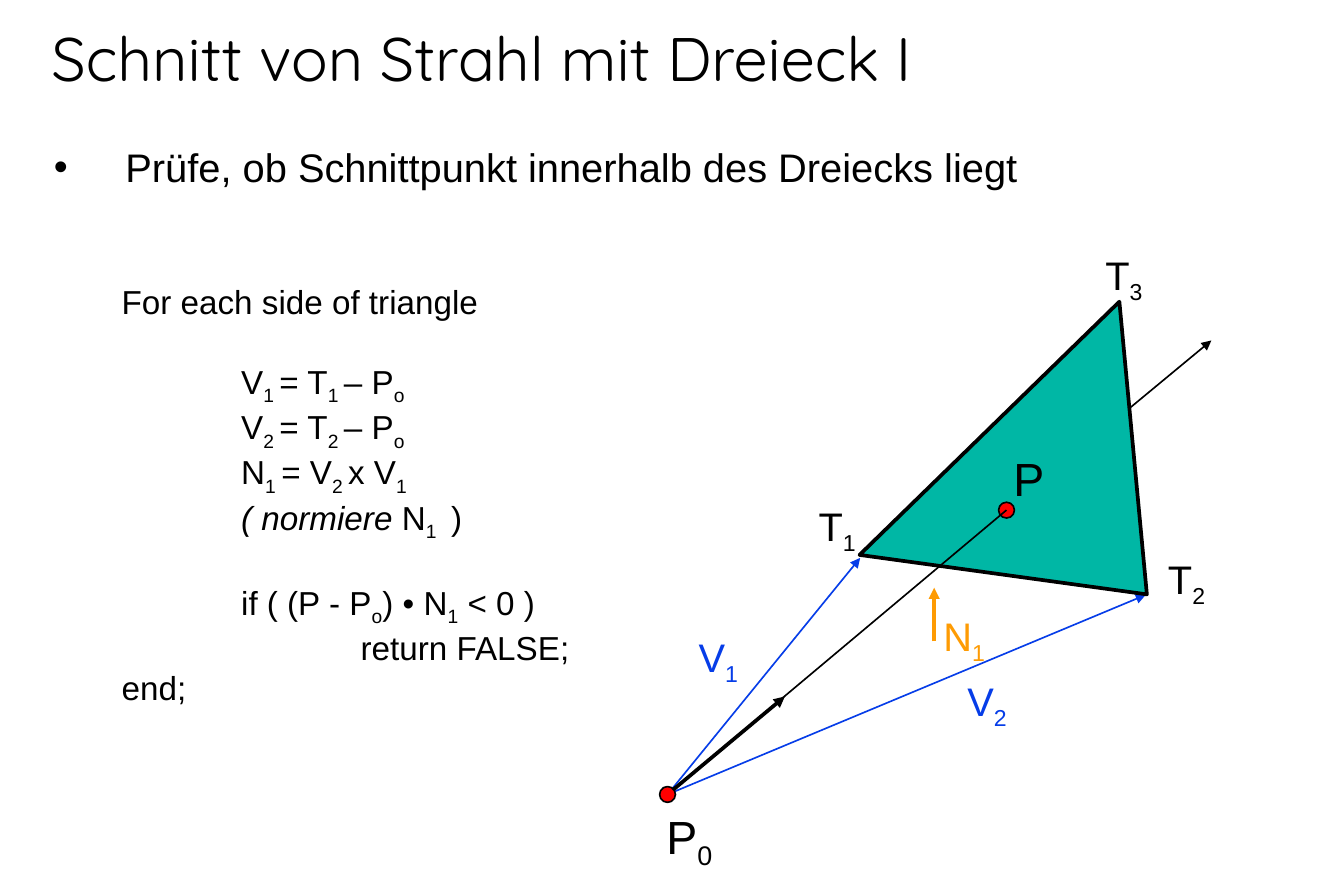
from lxml.etree import SubElement as Sub
from pptx import Presentation as Deck
from pptx.dml.color import RGBColor as RGB
from pptx.enum.shapes import MSO_CONNECTOR as Link, MSO_SHAPE as Form
from pptx.enum.text import MSO_ANCHOR as Anchor, MSO_AUTO_SIZE as Fit, PP_ALIGN as Align
from pptx.oxml.ns import qn
from pptx.util import Inches, Pt

BLACK = RGB(0, 0, 0)
BLUE = RGB(0x06, 0x3D, 0xE8)
TEAL = RGB(0x00, 0xB7, 0xA5)
RED = RGB(0xFF, 0, 0)
GOLD = RGB(0xFE, 0x9B, 0x03)
COLS, ROWS = 45, 30


def write(par, text, size=24, color=BLACK, font="Arial", lead="",
          align=Align.LEFT, indent=0, hang=0, before=0, space=1.0):
    par.alignment = align
    par.space_before = Pt(before)
    par.line_spacing = space
    props = par._p.get_or_add_pPr()
    props.set("marL", str(Inches(indent)))
    props.set("indent", str(-Inches(hang)))
    parts = [(lead, False, True)] if lead else []
    parts += [(bit, i % 2 == 1, False) for i, bit in enumerate(text.split("|"))]
    for bit, low, slant in parts:
        run = par.add_run()
        run.text = bit
        run.font.name = font
        run.font.size = Pt(size)
        run.font.color.rgb = color
        run.font.italic = slant
        if low:
            run._r.get_or_add_rPr().set("baseline", "-25000")


class Sketch:
    def __init__(self, deck):
        self.slide = deck.slides.add_slide(deck.slide_layouts[1])
        self.shapes = self.slide.shapes
        self.col = deck.slide_width / COLS
        self.row = deck.slide_height / ROWS

    def spot(self, x, y):
        return round(x * self.col), round(y * self.row)

    def box(self, x, y, wide, high):
        return *self.spot(x, y), *self.spot(wide, high)

    def hold(self, index, text, area, anchor, **style):
        shape = self.slide.placeholders[index]
        shape.left, shape.top, shape.width, shape.height = self.box(*area)
        frame = shape.text_frame
        frame.auto_size = Fit.NONE
        frame.vertical_anchor = anchor
        write(frame.paragraphs[0], text, **style)

    def block(self, area, lines):
        frame = self.shapes.add_textbox(*self.box(*area)).text_frame
        frame.word_wrap = True
        for i, (text, style) in enumerate(lines):
            par = frame.add_paragraph() if i else frame.paragraphs[0]
            write(par, text, **style)

    def label(self, text, x, y, size=24, color=BLACK):
        wide, high = 3.2, size / 12
        style = dict(size=size, color=color, align=Align.CENTER)
        self.block((x - wide / 2, y - high / 2, wide, high), [(text, style)])

    def ray(self, start, end, color=BLACK, width=1, head=True):
        line = self.shapes.add_connector(Link.STRAIGHT, *self.spot(*start), *self.spot(*end))
        line.line.color.rgb = color
        line.line.width = Pt(width)
        if head:
            Sub(line.line._get_or_add_ln(), qn("a:tailEnd"), type="triangle")
        Sub(line._element.spPr, qn("a:effectLst"))

    def paint(self, shape, fill, width):
        shape.shadow.inherit = False
        shape.fill.solid()
        shape.fill.fore_color.rgb = fill
        shape.line.color.rgb = BLACK
        shape.line.width = Pt(width)

    def dot(self, x, y, size=0.53):
        area = self.box(x - size / 2, y - size / 2, size, size)
        self.paint(self.shapes.add_shape(Form.OVAL, *area), RED, 1)

    def area(self, first, *rest):
        path = self.shapes.build_freeform(*self.spot(*first))
        path.add_line_segments([self.spot(*point) for point in rest], close=True)
        self.paint(path.convert_to_shape(), TEAL, 2.25)


def main():
    deck = Deck()
    deck.slide_width, deck.slide_height = Inches(11.25), Inches(7.5)
    art = Sketch(deck)

    eye, hit = (22.35, 26.6), (33.7, 17.08)
    left, right, top = (28.78, 18.58), (38.4, 19.9), (37.48, 10.1)

    art.hold(0, "Schnitt von Strahl mit Dreieck I", (1.32, 0, 40.68, 3.35),
             Anchor.BOTTOM, size=37, font="Quicksand", space=1.04)
    art.hold(1, "Prüfe, ob Schnittpunkt innerhalb des Dreiecks liegt",
             (1.4, 4.57, 34.6, 2), Anchor.TOP, indent=0.6, hang=0.6)

    deep, gap = dict(size=20, indent=1), 24
    art.block((3.68, 9.23, 17, 15.08), [
        ("For each side of triangle", dict(size=20)),
        ("V|1 |= T|1 |– P|o", dict(deep, before=gap)),
        ("V|2 |= T|2 |– P|o", deep),
        ("N|1 |= V|2 |x V|1", deep),
        (" N|1 | )", dict(deep, lead="( normiere")),
        ("if ( (P - P|o|) • N|1| < 0 )", dict(deep, before=gap)),
        ("return FALSE;", dict(deep, indent=2)),
        ("end;", dict(size=20)),
    ])

    art.ray(eye, (28.8, 18.68), BLUE)
    art.ray(eye, (38.36, 19.92), BLUE)
    art.ray(hit, (40.56, 11.4))
    art.area(left, right, top)
    art.dot(*hit)
    art.ray(eye, hit, head=False)
    art.ray((31.28, 21.48), (31.28, 19.68), GOLD, 2.25)
    art.ray(eye, (26.28, 23.32), width=2.25)
    art.dot(*eye)

    art.label("V|1", 24.05, 22, color=BLUE)
    art.label("V|2", 33.05, 23.46, color=BLUE)
    art.label("N|1", 32.28, 21.28, color=GOLD)
    art.label("T|1", 28.03, 17.6)
    art.label("T|2", 39.73, 19.36)
    art.label("T|3", 37.63, 9.2)
    art.label("P|0", 23.08, 28.02, size=28)
    art.label("P", 34.45, 16.04, size=28)

    deck.save("out.pptx")


if __name__ == "__main__":
    main()
